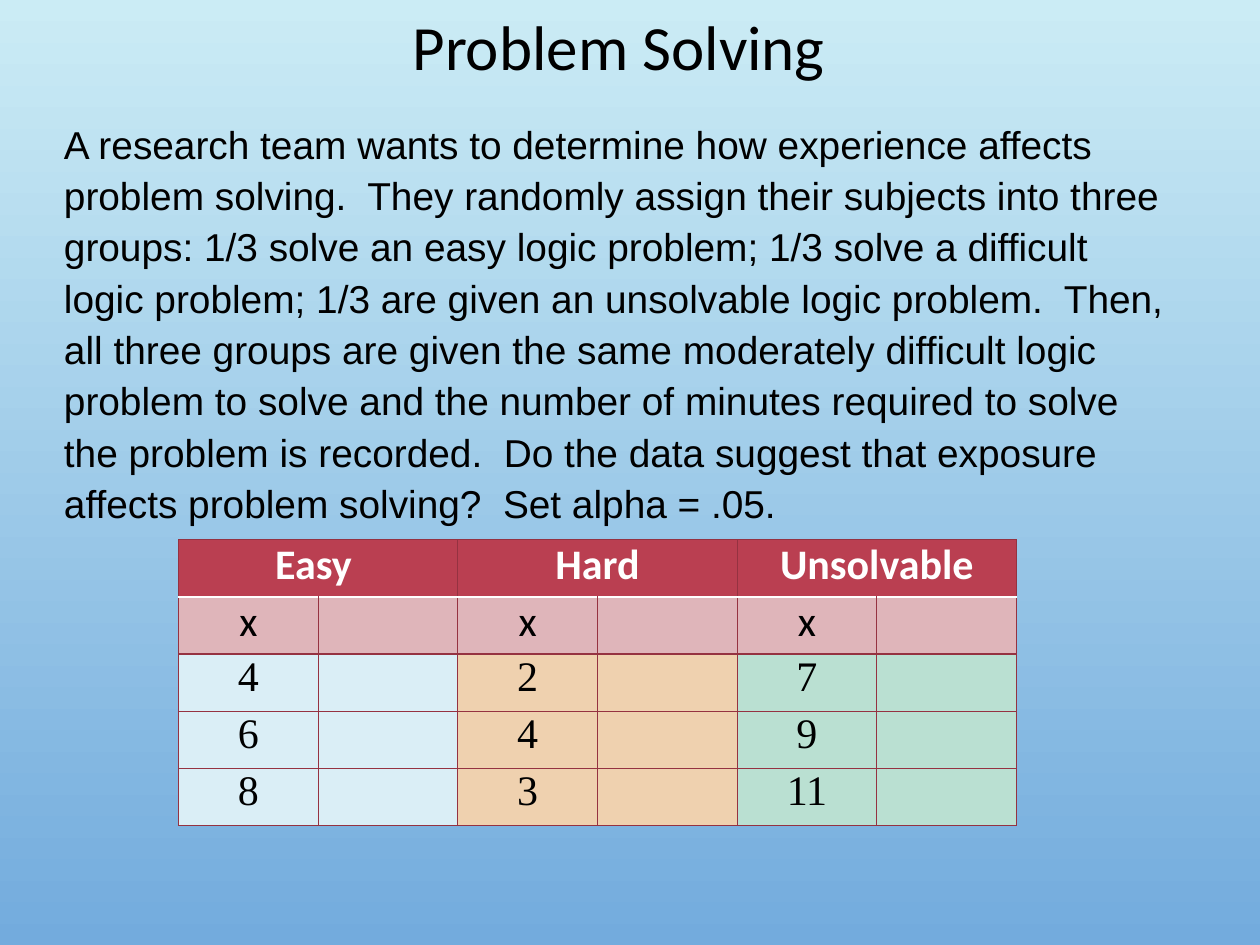
from lxml import etree
from pptx import Presentation
from pptx.dml.color import RGBColor
from pptx.enum.text import MSO_ANCHOR, PP_ALIGN
from pptx.oxml.ns import qn
from pptx.util import Cm, Pt

CENTER = PP_ALIGN.CENTER
MIDDLE = MSO_ANCHOR.MIDDLE
TITLE_ONLY = 5

HUES = {
    "sky": "CBECF5", "deep": "73ABDD", "ink": "000000", "white": "FFFFFF",
    "head": "BA3F51", "sub": "DFB5BA", "line": "953241",
    "easy": "DAEEF6", "hard": "EFD1AF", "none": "BAE0D2",
}
GROUPS = [
    ("Easy ", "easy", [4, 6, 8]),
    ("Hard", "hard", [2, 4, 3]),
    ("Unsolvable", "none", [7, 9, 11]),
]
STORY = (
    "A research team wants to determine how experience affects problem "
    "solving.  They randomly assign their subjects into three groups: 1/3 "
    "solve an easy logic problem; 1/3 solve a difficult logic problem; 1/3 "
    "are given an unsolvable logic problem.  Then, all three groups are given "
    "the same moderately difficult logic problem to solve and the number of "
    "minutes required to solve the problem is recorded.  Do the data suggest "
    "that exposure affects problem solving?  Set alpha = .05."
)


def color(name):
    return RGBColor.from_string(HUES[name])


def add_run(para, text, size, face, hue="ink", bold=False):
    run = para.add_run()
    run.text = text
    font = run.font
    font.size, font.name, font.bold = Pt(size), face, bold
    font.color.rgb = color(hue)


def set_back(slide):
    fill = slide.background.fill
    fill.gradient()
    fill.gradient_angle = 270
    for stop, name in zip(fill.gradient_stops, ("sky", "deep")):
        stop.color.rgb = color(name)


def set_title(slide, text):
    title = slide.shapes.title
    title.left, title.top = Cm(1.68), Cm(-0.15)
    title.width, title.height = Cm(21.59), Cm(2.34)
    frame = title.text_frame
    frame.vertical_anchor = MIDDLE
    para = frame.paragraphs[0]
    para.alignment, para.line_spacing = CENTER, 0.9
    add_run(para, text, 36, "Calibri")


def add_story(slide, text):
    box = slide.shapes.add_textbox(Cm(1.04), Cm(2.21), Cm(22.86), Cm(9.14))
    frame = box.text_frame
    frame.word_wrap = True
    para = frame.paragraphs[0]
    para.line_spacing = 1.1
    add_run(para, text, 22.2, "Arial")


def set_edge(cell, index, side, hue, width):
    line = etree.Element(qn(f"a:ln{side}"), w=str(Pt(width)))
    fill = etree.SubElement(line, qn("a:solidFill"))
    etree.SubElement(fill, qn("a:srgbClr"), val=HUES[hue])
    cell._tc.get_or_add_tcPr().insert(index, line)


def style_cell(cell, row, hue):
    cell.margin_left = cell.margin_right = Cm(0.18)
    cell.margin_top = cell.margin_bottom = 0
    cell.fill.solid()
    cell.fill.fore_color.rgb = color(hue)
    for index, side in enumerate("LRTB"):
        # White rule between the header and the rows below
        rule = (row, side) in ((0, "B"), (1, "T"))
        set_edge(cell, index, side, *(("white", 1.25) if rule else ("line", 0.75)))


def fill_cell(cell, text, face, hue="ink", bold=False):
    para = cell.text_frame.paragraphs[0]
    para.alignment = CENTER
    add_run(para, text, 24, face, hue, bold)


def add_scores(slide, groups):
    rows, cols = 2 + len(groups[0][2]), 2 * len(groups)
    table = slide.shapes.add_table(
        rows, cols, Cm(3.6), Cm(10.88), Cm(16.89), Cm(5.76)).table
    for col, (name, hue, scores) in enumerate(groups):
        left = 2 * col
        for row, shade in enumerate(["head", "sub"] + [hue] * len(scores)):
            for side in (left, left + 1):
                style_cell(table.cell(row, side), row, shade)
        # Header spans the score column and its blank partner
        head = table.cell(0, left)
        head.merge(table.cell(0, left + 1))
        fill_cell(head, name, "Calibri", "white", True)
        fill_cell(table.cell(1, left), "x", "Calibri")
        for row, score in enumerate(scores, 2):
            fill_cell(table.cell(row, left), str(score), "Times New Roman")


def main():
    deck = Presentation()
    deck.slide_width, deck.slide_height = Cm(25.4), Cm(19.05)
    slide = deck.slides.add_slide(deck.slide_layouts[TITLE_ONLY])
    set_back(slide)
    add_story(slide, STORY)
    set_title(slide, "Problem Solving")
    add_scores(slide, GROUPS)
    deck.save("out.pptx")


if __name__ == "__main__":
    main()
